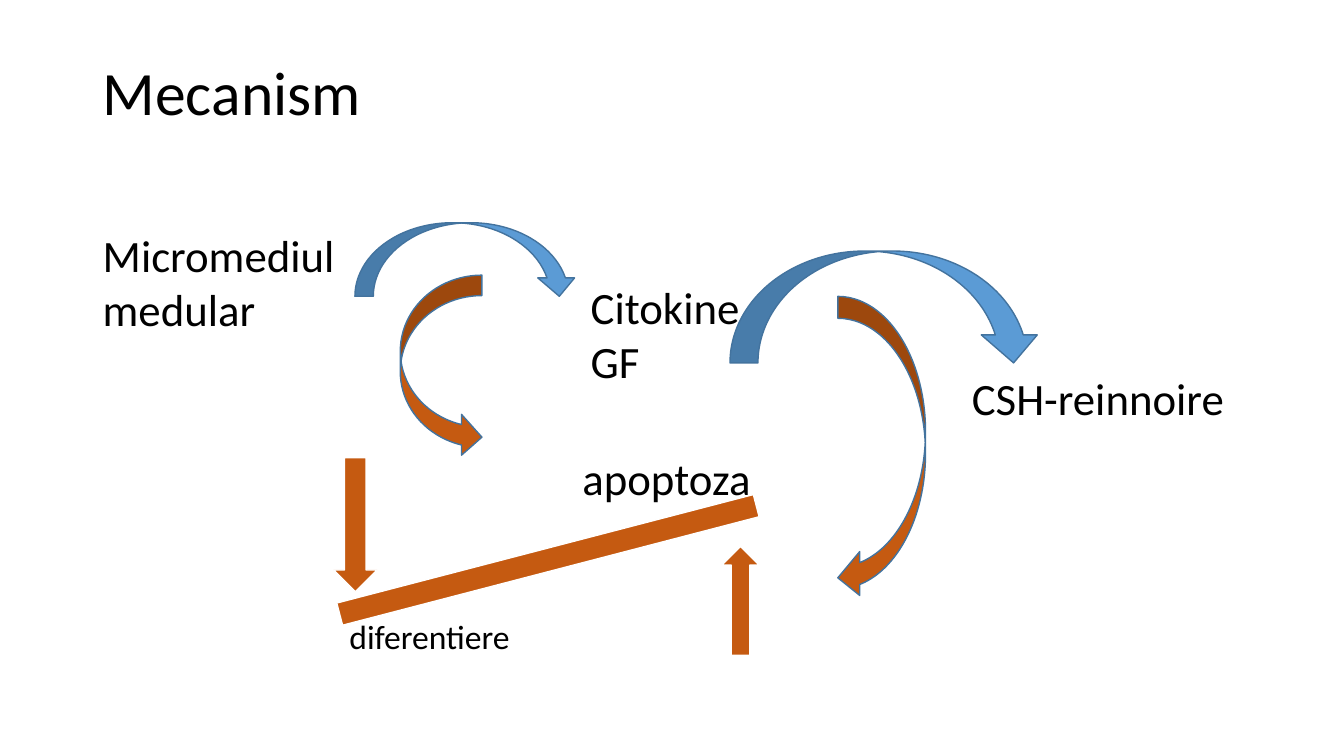
from pptx import Presentation
from pptx.dml.color import RGBColor
from pptx.enum.shapes import MSO_SHAPE as Shape
from pptx.enum.text import MSO_ANCHOR as Anchor, PP_ALIGN as Align
from pptx.util import Inches, Pt

SLIDE_SIZE = (13.33, 7.5)
FONT = "Calibri"
COLORS = {"text": "000000", "blue": "5B9BD5", "orange": "C55A11",
          "edge": "43739E", "white": "FFFFFF"}

# Boxes are left, top, width, height in inches
TITLE = ("Mecanism", (0.92, 0.4, 11.5, 1.09), 44)
FACTORS = [
    ("Micromediul medular", (0.92, 2.21, 2.61, 1.18), 32),
    ("Citokine, GF", (5.76, 2.73, 1.81, 1.18), 32),
    ("CSH-reinnoire", (9.54, 3.63, 3.33, 0.64), 32),
]
BALANCE_BEAM = (Shape.MATH_MINUS, (2.53, 5.07, 5.81, 0.97), 345.4)
# Each side of the balance: arrow, its box, then label, box, size and inset
BALANCE_SIDES = [
    (Shape.DOWN_ARROW, (3.31, 4.54, 0.43, 1.33),
     "apoptoza", (5.37, 4.2, 2.48, 1.14), 32, 0.25),
    (Shape.UP_ARROW, (7.16, 5.42, 0.37, 1.08),
     "diferentiere", (3.27, 5.77, 1.98, 1.14), 24, 0.19),
]
CURVED_ARROWS = [
    (Shape.CURVED_DOWN_ARROW, (3.52, 2.21, 2.21, 0.73), "blue"),
    (Shape.CURVED_DOWN_ARROW, (7.24, 2.49, 3.09, 1.11), "blue"),
    (Shape.CURVED_LEFT_ARROW, (8.31, 2.94, 0.87, 3.01), "orange"),
    (Shape.CURVED_RIGHT_ARROW, (3.97, 2.73, 0.81, 1.81), "orange"),
]
MIDDLE = {"vertical_anchor": Anchor.MIDDLE}
TIGHT = {"line_spacing": 0.9}


def rgb(name):
    return RGBColor.from_string(COLORS[name])


def set_all(target, values):
    for name, value in values.items():
        setattr(target, name, value)


def add_label(slide, text, box, size, frame_format=None, paragraph_format=None):
    frame = slide.shapes.add_textbox(*map(Inches, box)).text_frame
    set_all(frame, {"word_wrap": True, **(frame_format or {})})
    paragraph = frame.paragraphs[0]
    set_all(paragraph, paragraph_format or {})
    run = paragraph.add_run()
    run.text = text
    set_all(run.font, {"name": FONT, "size": Pt(size)})
    run.font.color.rgb = rgb("text")


def add_figure(slide, kind, box, fill, edge, rotation=0):
    figure = slide.shapes.add_shape(kind, *map(Inches, box))
    figure.rotation = rotation
    figure.shadow.inherit = False
    figure.fill.solid()
    figure.fill.fore_color.rgb = rgb(fill)
    figure.line.color.rgb = rgb(edge)
    figure.line.width = Pt(1)


def add_balance(slide):
    kind, box, tilt = BALANCE_BEAM
    add_figure(slide, kind, box, "orange", "white", tilt)
    for arrow, arrow_box, label, label_box, size, inset in BALANCE_SIDES:
        add_figure(slide, arrow, arrow_box, "orange", "white")
        margins = {f"margin_{side}": Inches(inset)
                   for side in ("left", "top", "right", "bottom")}
        centred = {"alignment": Align.CENTER, "space_after": Pt(0.35 * size)}
        add_label(slide, label, label_box, size,
                  {**MIDDLE, **margins}, {**TIGHT, **centred})


def main():
    deck = Presentation()
    deck.slide_width, deck.slide_height = map(Inches, SLIDE_SIZE)
    slide = deck.slides.add_slide(deck.slide_layouts[6])
    add_label(slide, *TITLE, MIDDLE, TIGHT)
    for factor in FACTORS:
        add_label(slide, *factor)
    add_balance(slide)
    for kind, box, fill in CURVED_ARROWS:
        add_figure(slide, kind, box, fill, "edge")
    deck.save("out.pptx")


if __name__ == "__main__":
    main()
